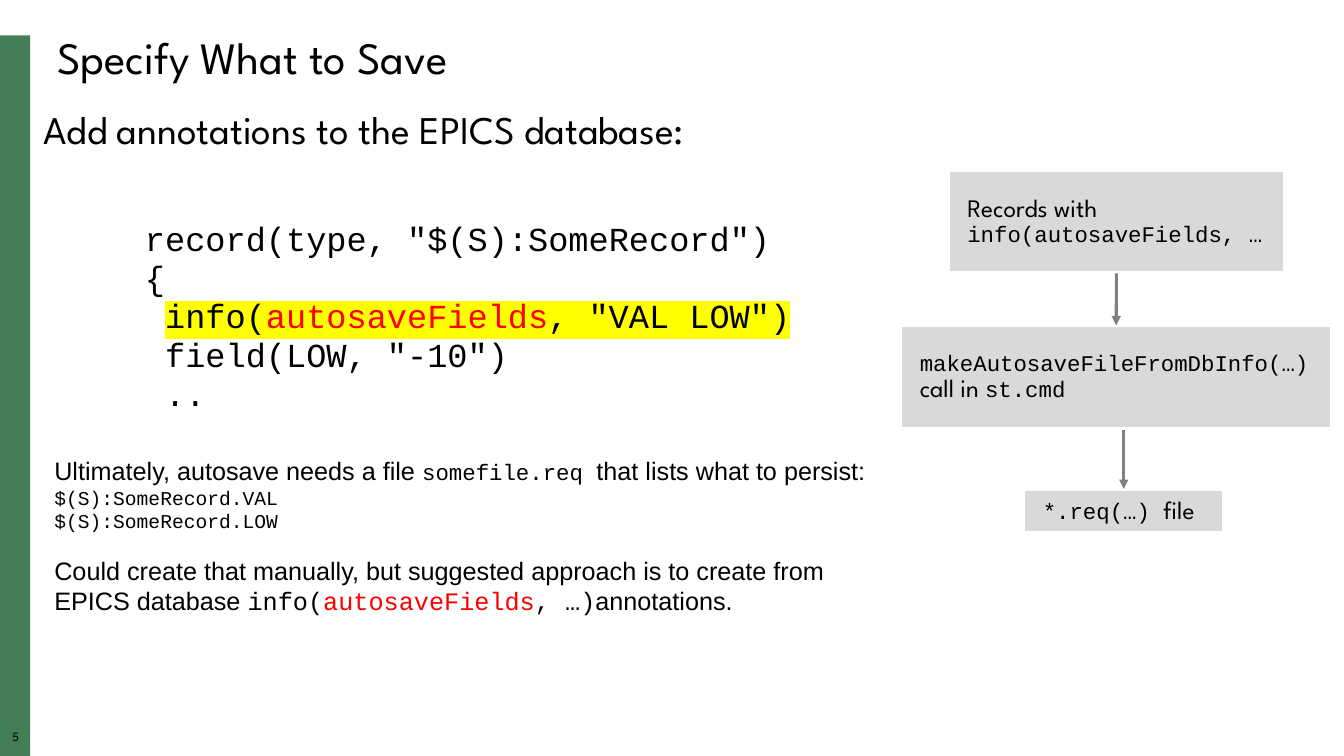
from lxml.etree import SubElement, Element
from pptx import Presentation
from pptx.dml.color import RGBColor
from pptx.enum.shapes import MSO_CONNECTOR, MSO_SHAPE
from pptx.enum.text import MSO_ANCHOR, MSO_AUTO_SIZE, PP_ALIGN
from pptx.oxml.ns import qn
from pptx.util import Cm, Pt


def rgb(value):
    """Turn a hex string into a colour."""
    return RGBColor.from_string(value)


class Deck:
    """Hold the style and the current slide, and add elements to it."""

    SPARTAN, ARIAL, MONO = "League Spartan", "Arial", "Courier New"
    BLACK, RED, YELLOW = "000000", "FF0000", "FFFF00"
    GREEN, GREY, ARROW, WHITE = "447E59", "D9D9D9", "808080", "FFFFFF"

    def __init__(self, prs):
        """Start a slide with a title and a body placeholder."""
        self.s = prs.slides.add_slide(prs.slide_layouts[1])

    def add_text(self, p, text, font, size, color=BLACK, highlight=None):
        """Add one formatted run to a paragraph."""
        r = p.add_run()
        r.text = text
        for key, value in {"name": font, "size": Pt(size)}.items():
            setattr(r.font, key, value)
        r.font.color.rgb = rgb(color)
        if highlight:
            mark = Element(qn("a:highlight"))
            SubElement(mark, qn("a:srgbClr")).set("val", highlight)
            r._r.get_or_add_rPr().find(qn("a:solidFill")).addnext(mark)

    def fill_text(self, sp, lines, inset=None, anchor=MSO_ANCHOR.TOP):
        """Fill a shape with (runs, format, indent) lines."""
        tf = sp.text_frame
        frame = {"word_wrap": True, "auto_size": MSO_AUTO_SIZE.NONE,
                 "vertical_anchor": anchor}
        if inset is not None:
            sides = ("left", "top", "right", "bottom")
            frame.update({f"margin_{side}": Cm(inset) for side in sides})
        for key, value in frame.items():
            setattr(tf, key, value)
        for i, (runs, fmt, indent) in enumerate(lines):
            p = tf.add_paragraph() if i else tf.paragraphs[0]
            pPr = p._p.get_or_add_pPr()
            pPr.set("marL", str(int(Cm(indent))))
            pPr.set("indent", "0")
            SubElement(pPr, qn("a:buNone"))
            base = {"alignment": PP_ALIGN.LEFT, "space_before": Pt(0),
                    "line_spacing": 0.9}
            for key, value in {**base, **fmt}.items():
                setattr(p, key, value)
            for r in runs:
                self.add_text(p, *r)

    def placeholder(self, idx, box, lines, anchor=MSO_ANCHOR.TOP):
        """Move a template placeholder and fill it."""
        sp = self.s.placeholders[idx]
        for key, value in zip(("left", "top", "width", "height"), box):
            setattr(sp, key, Cm(value))
        self.fill_text(sp, lines, anchor=anchor)

    def textbox(self, box, lines, inset=None):
        """Add a text box."""
        self.fill_text(self.s.shapes.add_textbox(*map(Cm, box)), lines, inset)

    def rect(self, box, fill, line=None, lines=()):
        """Add a filled rectangle, with text if given."""
        sp = self.s.shapes.add_shape(MSO_SHAPE.RECTANGLE, *map(Cm, box))
        sp.shadow.inherit = False
        sp.fill.solid()
        sp.fill.fore_color.rgb = rgb(fill)
        if line:
            sp.line.color.rgb = rgb(line)
            sp.line.width = Pt(3)
        else:
            sp.line.fill.background()
        self.fill_text(sp, lines, 0.5, MSO_ANCHOR.MIDDLE)
        return sp

    def arrow(self, x, top, bottom, start=None, end=None):
        """Add a downward arrow, joined to the given rectangles."""
        c = self.s.shapes.add_connector(
            MSO_CONNECTOR.STRAIGHT, Cm(x), Cm(top), Cm(x), Cm(bottom))
        if start:
            c.begin_connect(start, 2)
        if end:
            c.end_connect(end, 0)
        c.line.color.rgb = rgb(self.ARROW)
        c.line.width = Pt(2.25)
        SubElement(c.line._get_or_add_ln(), qn("a:tailEnd")).set("type", "triangle")
        SubElement(c._element.spPr, qn("a:effectLst"))


def main():
    """Build the slide and save it."""
    prs = Presentation()
    prs.slide_width, prs.slide_height = Cm(33.87), Cm(19.05)
    d = Deck(prs)
    sans, arial, mono = d.SPARTAN, d.ARIAL, d.MONO

    d.rect((0, 0.89, 0.76, 18.16), d.GREEN)
    d.textbox((0, 18.4, 0.79, 0.43),
              [([("5", sans, 9)], {"alignment": PP_ALIGN.CENTER}, 0)], 0)
    d.placeholder(0, (1.19, 0.76, 31.75, 1.5),
                  [([("Specify What to Save", sans, 32)], {}, 0)],
                  MSO_ANCHOR.MIDDLE)

    code = [
        [('record(type, "$(S):SomeRecord")', mono, 24)],
        [("{", mono, 24)],
        [(" ", mono, 24), ("info(", mono, 24, d.BLACK, d.YELLOW),
         ("autosaveFields", mono, 24, d.RED, d.YELLOW),
         (', "VAL LOW")', mono, 24, d.BLACK, d.YELLOW)],
        [(' field(LOW, "-10")', mono, 24)],
        [(" ..", mono, 24)],
    ]
    heading = [("Add annotations to the EPICS database:", sans, 28)]
    d.placeholder(1, (0.84, 2.67, 22.86, 8.53), [(heading, {}, 0)] + [
        (runs, {"line_spacing": 0.96, "space_before": Pt(0 if i else 48)}, 2.56)
        for i, runs in enumerate(code)])

    notes = [
        ([("Ultimately, autosave needs a file ", arial, 18),
          ("somefile.req ", mono, 16),
          ("that lists what to persist:", arial, 18)], 0),
        ([("$(S):SomeRecord.VAL", mono, 14)], 0),
        ([("$(S):SomeRecord.LOW", mono, 14)], 0),
        ([("Could create that manually, but suggested approach is to create from",
           arial, 18)], 16),
        ([("EPICS database ", arial, 18), ("info(", mono, 18),
          ("autosaveFields", mono, 18, d.RED), (", …)", mono, 18),
          ("annotations.", arial, 18)], 0),
    ]
    d.textbox((0, 11.35, 22.6, 4.37), [
        (runs, {"line_spacing": 1.0, "space_before": Pt(gap)}, 1.12)
        for runs, gap in notes])

    steps = [
        ((23.88, 4.27, 8.51, 2.62),
         [[("Records with", sans, 18)], [("info(autosaveFields, …", mono, 16)]]),
        ((22.68, 8.2, 10.9, 2.62),
         [[("makeAutosaveFileFromDbInfo(…)", mono, 16)],
          [("call in ", sans, 18), ("st.cmd", mono, 16)]]),
        ((25.78, 12.32, 5.08, 1.12),
         [[("*.req(…) ", mono, 16), ("file", sans, 18)]]),
    ]
    records, call, req = [
        d.rect(box, d.GREY, d.WHITE, [(runs, {}, 0) for runs in lines])
        for box, lines in steps]
    d.arrow(28.13, 6.89, 8.2, records, call)
    d.arrow(28.32, 10.84, 12.32, end=req)

    prs.save("out.pptx")


if __name__ == "__main__":
    main()
